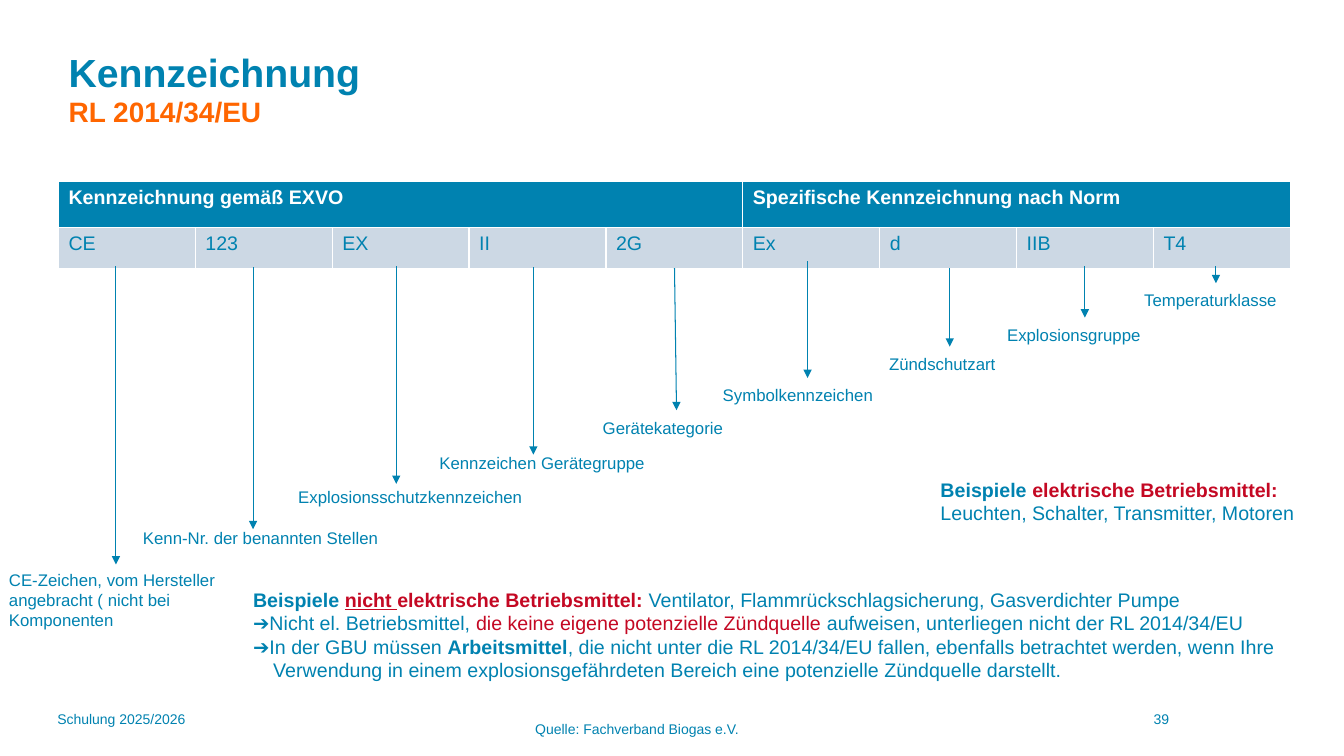
from lxml import etree
from pptx import Presentation
from pptx.dml.color import RGBColor
from pptx.enum.shapes import MSO_CONNECTOR
from pptx.enum.text import MSO_ANCHOR, MSO_AUTO_SIZE, PP_ALIGN
from pptx.oxml.ns import qn
from pptx.util import Inches, Pt

STRAIGHT = MSO_CONNECTOR.STRAIGHT
LEFT, CENTER = PP_ALIGN.LEFT, PP_ALIGN.CENTER
TOP, MIDDLE = MSO_ANCHOR.TOP, MSO_ANCHOR.MIDDLE
NO_AUTOFIT = MSO_AUTO_SIZE.NONE

BLUE, ORANGE, RED = "0082B0", "FF6600", "C40823"
WHITE, PALE_BLUE = "FFFFFF", "CCD8E4"

TITLE = [("Kennzeichnung", {"size": 28, "bold": True}),
         ("RL 2014/34/EU", {"size": 20, "bold": True, "color": ORANGE})]

# Heading and the codes it spans
MARKING_GROUPS = [
    ("Kennzeichnung gemäß EXVO", ["CE", "123", "EX", "II", "2G"]),
    ("Spezifische Kennzeichnung nach Norm", ["Ex", "d", "IIB", "T4"]),
]

# Meaning, its box (left, top, width, height), arrow start and end
MEANINGS = [
    ("CE-Zeichen, vom Hersteller angebracht ( nicht bei Komponenten",
     (-0.01, 5.6, 2.52, 0.71), (1.15, 2.64), (1.15, 5.6)),
    ("Kenn-Nr. der benannten Stellen",
     (1.32, 5.19, 2.87, 0.3), (2.51, 2.65), (2.51, 5.25)),
    ("Explosionsschutzkennzeichen",
     (2.86, 4.78, 2.87, 0.3), (3.93, 2.64), (3.93, 4.8)),
    ("Kennzeichen Gerätegruppe",
     (4.26, 4.44, 2.44, 0.3), (5.29, 2.65), (5.29, 4.51)),
    ("Gerätekategorie",
     (5.88, 4.1, 2.44, 0.3), (6.69, 2.66), (6.71, 4.07)),
    ("Symbolkennzeichen",
     (7.07, 3.77, 2.44, 0.3), (8.01, 2.59), (8.01, 3.75)),
    ("Zündschutzart",
     (8.72, 3.46, 2.44, 0.3), (9.42, 2.66), (9.42, 3.44)),
    ("Explosionsgruppe",
     (9.89, 3.17, 2.44, 0.3), (10.76, 2.64), (10.76, 3.15)),
    ("Temperaturklasse",
     (11.25, 2.83, 2.44, 0.3), (12.06, 2.64), (12.06, 2.81)),
]

BOLD, RED_TEXT = {"bold": True}, {"color": RED}
BOLD_RED = {**BOLD, **RED_TEXT}

ELECTRICAL = [
    [("Beispiele ", BOLD), ("elektrische Betriebsmittel:", BOLD_RED)],
    [("Leuchten, Schalter, Transmitter, Motoren", {})],
]
NON_ELECTRICAL = [
    [("Beispiele ", BOLD), ("nicht ", {**BOLD_RED, "underline": True}),
     ("elektrische Betriebsmittel: ", BOLD_RED),
     ("Ventilator, Flammrückschlagsicherung, Gasverdichter Pumpe", {})],
    [("➔Nicht el. Betriebsmittel, ", {}),
     ("die keine eigene potenzielle Zündquelle", RED_TEXT),
     (" aufweisen, unterliegen nicht der RL 2014/34/EU", {})],
    [("➔In der GBU müssen ", {}), ("Arbeitsmittel", BOLD),
     (", die nicht unter die RL 2014/34/EU fallen, ebenfalls betrachtet "
      "werden, wenn Ihre Verwendung in einem explosionsgefährdeten Bereich "
      "eine potenzielle Zündquelle darstellt.", {})],
]


def rgb(value):
    return RGBColor.from_string(value)


class MarkingSlide:
    """Holds the slide and its shared text and line style."""

    def __init__(self, prs, font="Arial", color=BLUE):
        self.slide = prs.slides.add_slide(prs.slide_layouts[1])
        self.shapes = self.slide.shapes
        self.font, self.color = font, color

    def place(self, shape, box):
        for name, value in zip(("left", "top", "width", "height"), box):
            setattr(shape, name, Inches(value))

    def run(self, paragraph, text, size=14, color=None, **formats):
        run = paragraph.add_run()
        run.text = text
        run.font.color.rgb = rgb(color or self.color)
        formats = {"name": self.font, "size": Pt(size), "bold": False, **formats}
        for name, value in formats.items():
            setattr(run.font, name, value)

    def paragraphs(self, frame, lines, align=LEFT, size=14):
        """Write each line, a list of (text, formats), as a paragraph."""
        for i, line in enumerate(lines):
            paragraph = frame.paragraphs[0] if i == 0 else frame.add_paragraph()
            paragraph.alignment = align
            for text, formats in line:
                self.run(paragraph, text, **{"size": size, **formats})

    def title(self, parts, box):
        title = self.shapes.title
        self.place(title, box)
        frame = title.text_frame
        frame.auto_size, frame.vertical_anchor = NO_AUTOFIT, MIDDLE
        heading = frame.paragraphs[0]
        heading.alignment = LEFT
        for i, (text, formats) in enumerate(parts):
            if i:
                heading.add_line_break()
            self.run(heading, text, **formats)

    def body(self, lines, box, hanging=0.2):
        """Fill the body placeholder; lines after the first hang."""
        body = self.slide.placeholders[1]
        self.place(body, box)
        frame = body.text_frame
        frame.auto_size, frame.vertical_anchor = NO_AUTOFIT, TOP
        self.paragraphs(frame, lines)
        for i, paragraph in enumerate(frame.paragraphs):
            indent = Inches(hanging) if i else 0
            props = paragraph._p.get_or_add_pPr()
            props.set("marL", str(indent))
            props.set("indent", str(-indent))
            etree.SubElement(props, qn("a:buNone"))
            paragraph.space_before = Pt(0)

    def text(self, lines, box, size=12, align=LEFT, wrap=True):
        if isinstance(lines, str):
            lines = [[(lines, {})]]
        frame = self.shapes.add_textbox(*map(Inches, box)).text_frame
        frame.word_wrap = wrap
        self.paragraphs(frame, lines, align, size)

    def arrow(self, start, end):
        arrow = self.shapes.add_connector(STRAIGHT, *map(Inches, start + end))
        arrow.line.color.rgb = rgb(self.color)
        arrow.line.width = Pt(0.75)
        etree.SubElement(arrow.line._get_or_add_ln(), qn("a:tailEnd"), type="triangle")
        etree.SubElement(arrow._element.spPr, qn("a:effectLst"))

    def cell(self, cell, text, fill, **formats):
        cell.fill.solid()
        cell.fill.fore_color.rgb = rgb(fill)
        self.run(cell.text_frame.paragraphs[0], text, **formats)

    def marking_table(self, groups, box, row_heights):
        count = sum(len(codes) for _, codes in groups)
        table = self.shapes.add_table(2, count, *map(Inches, box)).table
        table.horz_banding = False
        for row, height in zip(table.rows, row_heights):
            row.height = Inches(height)
        first = 0
        for heading, codes in groups:
            last = first + len(codes) - 1
            table.cell(0, first).merge(table.cell(0, last))
            self.cell(table.cell(0, first), heading, BLUE, color=WHITE, bold=True)
            for column, code in enumerate(codes, first):
                self.cell(table.cell(1, column), code, PALE_BLUE)
            first = last + 1


def main():
    prs = Presentation()
    prs.slide_width, prs.slide_height = Inches(13.33), Inches(7.5)
    marking = MarkingSlide(prs)
    marking.title(TITLE, (0.58, 0.25, 8.5, 1.25))
    marking.marking_table(MARKING_GROUPS, (0.58, 1.8, 12.22, 0.86), (0.46, 0.4))
    for meaning, box, start, end in MEANINGS:
        marking.text(meaning, box)
        marking.arrow(start, end)
    marking.text(ELECTRICAL, (9.23, 4.69, 3.74, 0.57), size=14)
    marking.body(NON_ELECTRICAL, (2.41, 5.78, 10.52, 1.04))
    marking.text("Schulung 2025/2026", (0.47, 7, 3.25, 0.5), size=10)
    marking.text("Quelle: Fachverband Biogas e.V.", (5.21, 7.1, 2.25, 0.27),
                 size=10, wrap=False)
    marking.text("39", (10.13, 7, 2.78, 0.5), size=10, align=CENTER)
    prs.save("out.pptx")


if __name__ == "__main__":
    main()
